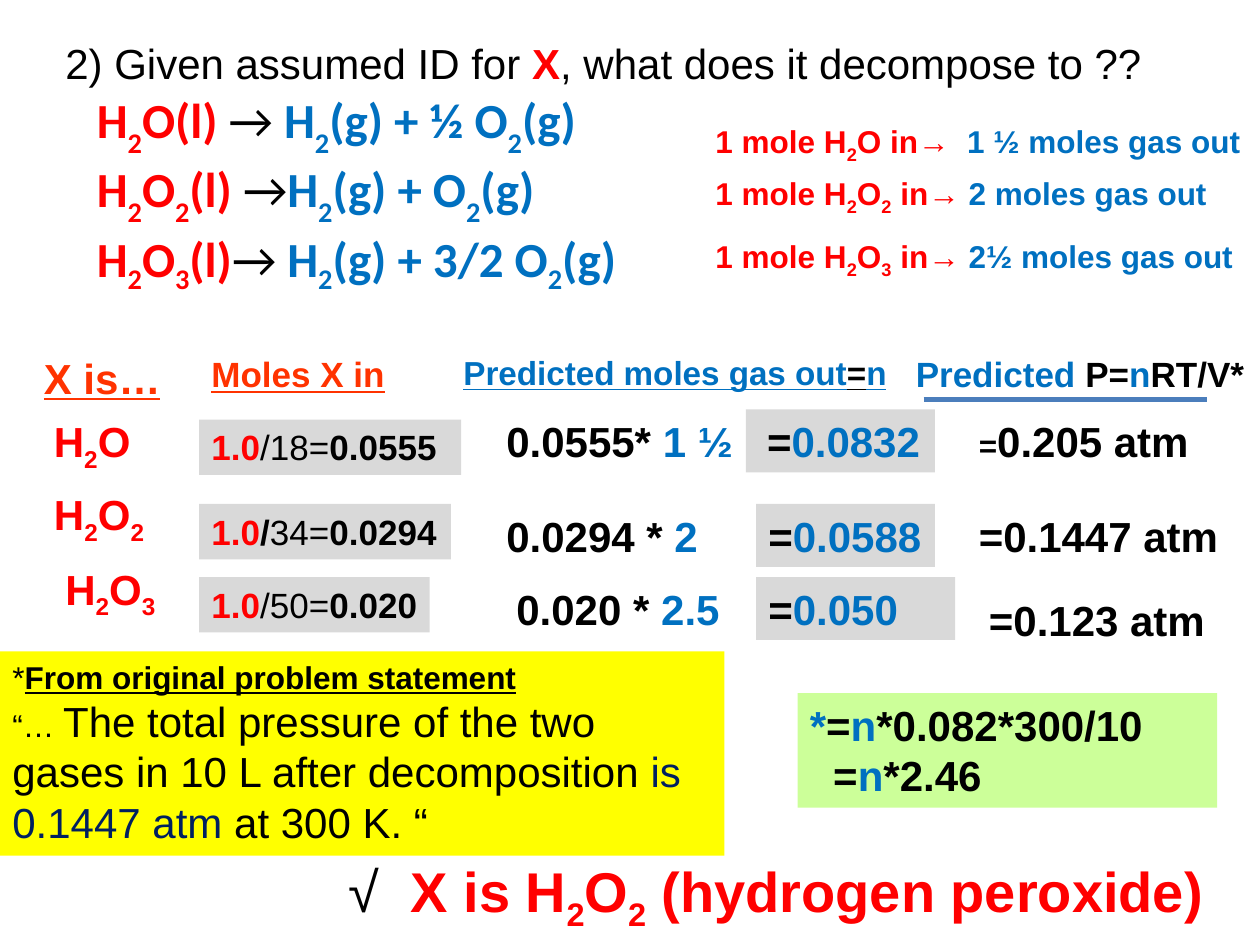
from pptx import Presentation
from pptx.dml.color import RGBColor
from pptx.enum.shapes import MSO_CONNECTOR, MSO_SHAPE
from pptx.enum.text import MSO_ANCHOR, MSO_AUTO_SIZE, PP_ALIGN
from pptx.oxml.ns import qn
from pptx.util import Inches, Pt
from lxml import etree

COLORS = {
    "black": "000000", "red": "FF0000", "orange": "FF3300", "blue": "0070C0",
    "navy": "002060", "grey": "D9D9D9", "green": "CCFF99", "yellow": "FFFF00",
    "rule": "4B7EBC",
}

presentation = Presentation()
presentation.slide_width = Inches(10)
presentation.slide_height = Inches(7.5)
slide = presentation.slides.add_slide(presentation.slide_layouts[6])


def add_runs(paragraph, runs, size, font="Arial", subscript=-25):
    """Each run is (text, color, style[, size]); ~2~ marks a subscript."""
    for text, color, style, *own_size in runs:
        for index, piece in enumerate(text.split("~")):
            if not piece:
                continue
            run = paragraph.add_run()
            run.text = piece
            run.font.name = font
            run.font.size = Pt(own_size[0] if own_size else size)
            run.font.bold = "b" in style
            run.font.underline = "u" in style
            run.font.color.rgb = RGBColor.from_string(COLORS[color])
            if index % 2:
                run._r.get_or_add_rPr().set("baseline", str(subscript * 1000))


def add_block(left, top, width, height, paragraphs, size, fill=None):
    """Add a text box, or a filled rectangle when a fill is given."""
    place = [Inches(value) for value in (left, top, width, height)]
    if fill:
        shape = slide.shapes.add_shape(MSO_SHAPE.RECTANGLE, *place)
        shape.shadow.inherit = False
        shape.fill.solid()
        shape.fill.fore_color.rgb = RGBColor.from_string(COLORS[fill])
        shape.line.fill.background()
    else:
        shape = slide.shapes.add_textbox(*place)
    frame = shape.text_frame
    frame.word_wrap = True
    frame.auto_size = MSO_AUTO_SIZE.SHAPE_TO_FIT_TEXT
    frame.vertical_anchor = MSO_ANCHOR.TOP
    for index, runs in enumerate(paragraphs):
        paragraph = frame.add_paragraph() if index else frame.paragraphs[0]
        paragraph.alignment = PP_ALIGN.LEFT
        add_runs(paragraph, runs, size)
    return shape


# Question
add_block(0.42, 0.25, 9.25, 0.5, [[
    ("2) Given assumed ID for ", "black", ""), ("X", "red", "b"),
    (", what does it decompose to ??", "black", "")]], 24)

# Decomposition equations
equations = [
    ("H~2~O(l) ", "→ ", "H~2~(g) + ½ O~2~(g)", "Comic Neue", -30),
    ("H~2~O~2~(l) ", "→", "H~2~(g) + O~2~(g)", "Calibri", -30),
    ("H~2~O~3~(l)", "→ ", "H~2~(g) + 3/2 O~2~(g)", "Calibri", -25),
]
equation_box = add_block(0.17, 0.77, 5.66, 1.51, [[]], 28)
frame = equation_box.text_frame
frame.vertical_anchor = MSO_ANCHOR.MIDDLE
for index, (reactant, arrow, products, tab_font, subscript) in enumerate(equations):
    paragraph = frame.add_paragraph() if index else frame.paragraphs[0]
    add_runs(paragraph, [("\t", "black", "")], 28, tab_font)
    add_runs(paragraph, [(reactant, "red", "b"), (arrow, "black", ""),
                         (products, "blue", "b")], 28, "Calibri", subscript)

# Moles in and out
for top, width, moles_in, moles_out in [
    (0.92, 4.75, "1 mole H~2~O in→  ", "1 ½ moles gas out"),
    (1.33, 4.42, "1 mole H~2~O~2~ in→", " 2 moles gas out"),
    (1.83, 4.42, "1 mole H~2~O~3~ in→ ", "2½ moles gas out"),
]:
    add_block(5.58, top, width, 0.4,
              [[(moles_in, "red", "b"), (moles_out, "blue", "b")]], 18)

# Column headings
for left, width, height, size, runs in [
    (0.25, 1.33, 0.5, 24, [("X is…", "orange", "bu")]),
    (1.58, 2.17, 0.44, 20, [("Moles X in", "orange", "bu")]),
    (3.58, 3.83, 0.42, 19, [("Predicted moles gas out", "blue", "bu"),
                            ("=", "black", "bu"), ("n", "blue", "bu")]),
    (7.17, 2.83, 0.44, 20, [("Predicted ", "blue", "b"), ("P=", "black", "b"),
                            ("n", "blue", "b"), ("RT/V*", "black", "b")]),
]:
    add_block(left, 2.75, width, height, [runs], size)

heading_rule = slide.shapes.add_connector(
    MSO_CONNECTOR.STRAIGHT, Inches(7.33), Inches(3.17), Inches(9.58), Inches(3.17))
heading_rule.line.color.rgb = RGBColor.from_string(COLORS["rule"])
heading_rule.line.width = Pt(2.5)
etree.SubElement(heading_rule._element.spPr, qn("a:effectLst"))

# Candidate formulas
for left, top, width, formula in [
    (0.33, 3.25, 1.17, "H~2~O"),
    (0.33, 3.83, 1.08, "H~2~O~2~"),
    (0.42, 4.42, 1.08, "H~2~O~3~"),
]:
    add_block(left, top, width, 0.5, [[(formula, "red", "b")]], 24)

# Moles of X in
for top, width, slash_style, mass, moles in [
    (3.33, 2.08, "", "18=", "0.0555"),
    (4, 2, "b", "34=", "0.0294"),
    (4.58, 1.83, "", "50=", "0.020"),
]:
    add_block(1.58, top, width, 0.44, [[
        ("1.0", "red", "b"), ("/", "black", slash_style),
        (mass, "black", ""), (moles, "black", "b")]], 20, "grey")

# Predicted moles of gas out
for left, top, width, moles, factor in [
    (3.92, 3.25, 2.08, "0.0555* ", "1 ½"),
    (3.92, 4, 1.75, "0.0294 * ", "2"),
    (4, 4.58, 2.08, "0.020 * ", "2.5"),
]:
    add_block(left, top, width, 0.5,
              [[(moles, "black", "b"), (factor, "blue", "b")]], 24)

for left, top, width, lead, total in [
    (5.92, 3.25, 1.5, " ", "0.0832"),
    (6, 4, 1.42, "", "0.0588"),
    (6, 4.58, 1.58, "", "0.050"),
]:
    add_block(left, top, width, 0.5, [[
        (lead, "blue", "b", 18), ("=", "black", "b"), (total, "blue", "b")]],
        24, "grey")

# Predicted pressures
for left, top, width, equals_size, pressure in [
    (7.67, 3.25, 2.17, 18, "0.205 atm"),
    (7.67, 4, 2.17, 24, "0.1447 atm"),
    (7.75, 4.67, 2.25, 24, "0.123 atm"),
]:
    add_block(left, top, width, 0.5, [[
        ("=", "black", "b", equals_size), (pressure, "black", "b")]], 24)

# Problem statement
add_block(0, 5.17, 5.75, 1.62, [
    [("*", "black", "", 18), ("From original problem statement", "black", "bu", 18)],
    [("“… ", "black", "", 18),
     ("The total pressure of the two gases in 10 L after decomposition ", "black", ""),
     ("is 0.1447 atm ", "navy", ""), ("at 300 K. “", "black", "")],
], 24, "yellow")

# Pressure formula
add_block(6.33, 5.5, 3.33, 0.91, [
    [("*", "blue", "b"), ("=", "black", "b"), ("n", "blue", "b"),
     ("*0.082*300/10", "black", "b")],
    [("  =", "black", "b"), ("n", "blue", "b"), ("*2.46", "black", "b")],
], 24, "green")

# Conclusion
add_block(2.67, 6.75, 7.33, 0.64, [[
    ("√  ", "black", ""), ("X is H~2~O~2~ (hydrogen peroxide)", "red", "b")]], 32)

presentation.save("out.pptx")
